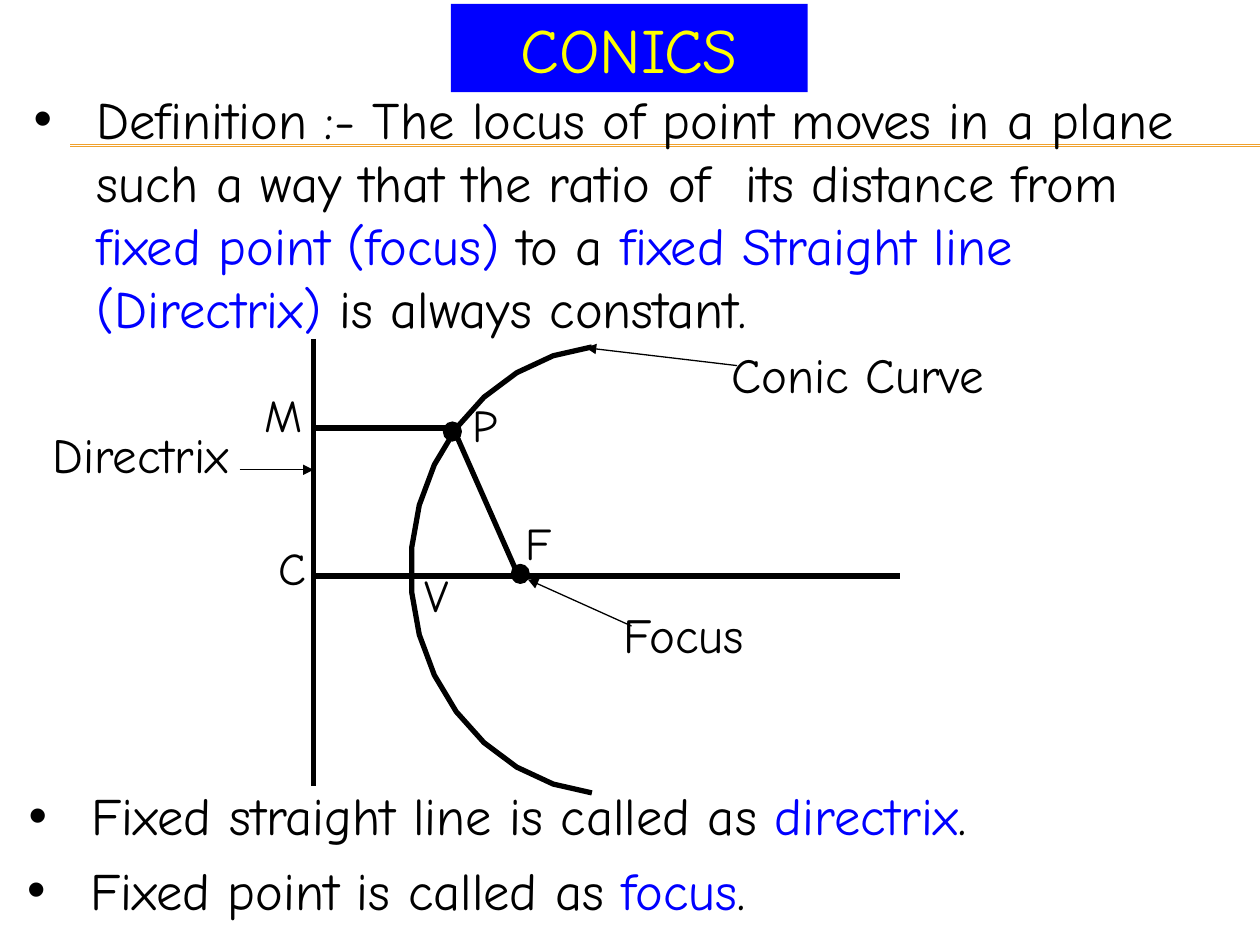
import math

from lxml import etree
from pptx import Presentation
from pptx import util as u
from pptx.dml.color import RGBColor
from pptx.enum import shapes, text
from pptx.oxml import ns

BLACK = RGBColor(0x00, 0x00, 0x00)
BLUE = RGBColor(0x00, 0x00, 0xFF)
YELLOW = RGBColor(0xFF, 0xFF, 0x00)
ORANGE = RGBColor(0xF0, 0xA2, 0x2E)
CENTER, RIGHT = text.PP_ALIGN.CENTER, text.PP_ALIGN.RIGHT


class Sketch:
    """Holds the style and the current slide; lengths are in centimetres."""

    font = "Comic Neue"
    thick, thin = 3, 0.75

    def __init__(self, slide):
        self.slide = slide

    def place(self, shape, left, top, width, height):
        frame = dict(left=left, top=top, width=width, height=height)
        for name, value in frame.items():
            setattr(shape, name, u.Cm(value))

    def span(self, para, wording, size, color):
        span = para.add_run()
        span.text = wording
        for name, value in dict(name=self.font, size=u.Pt(size)).items():
            setattr(span.font, name, value)
        span.font.color.rgb = color

    def frame(self, box):
        settings = dict(word_wrap=True, auto_size=text.MSO_AUTO_SIZE.NONE,
                        vertical_anchor=text.MSO_ANCHOR.TOP)
        for name, value in settings.items():
            setattr(box.text_frame, name, value)
        return box.text_frame.paragraphs[0]

    def title(self, wording, *at):
        title = self.slide.shapes.title
        self.place(title, *at)
        title.fill.solid()
        title.fill.fore_color.rgb = BLUE
        para = self.frame(title)
        para.alignment = CENTER
        self.span(para, wording, 36, YELLOW)

    def label(self, wording, *at, size=26, align=CENTER, parent=None):
        canvas = (parent or self.slide).shapes
        box = canvas.add_textbox(*map(u.Cm, at))
        para = self.frame(box)
        para.alignment = align
        self.span(para, wording, size, BLACK)

    def bullet(self, parts, *at):
        """Parts alternate between plain and highlighted wording."""
        box = self.slide.shapes.add_textbox(*map(u.Cm, at))
        para = self.frame(box)
        props = para._p.get_or_add_pPr()
        indent = u.Cm(1.27)
        props.set("marL", str(indent))
        props.set("indent", str(-indent))
        etree.SubElement(props, ns.qn("a:buFont"), typeface="Arial")
        etree.SubElement(props, ns.qn("a:buChar"), char="•")
        for index, wording in enumerate(parts):
            self.span(para, wording, 30, BLUE if index % 2 else BLACK)

    def line(self, *ends, width=thick, color=BLACK, arrow=False, parent=None):
        canvas = (parent or self.slide).shapes
        line = canvas.add_connector(shapes.MSO_CONNECTOR.STRAIGHT, *map(u.Cm, ends))
        line.line.width = u.Pt(width)
        line.line.color.rgb = color
        if arrow:
            etree.SubElement(line.line._get_or_add_ln(), ns.qn("a:tailEnd"), type="triangle")
        etree.SubElement(line._element.spPr, ns.qn("a:effectLst"))

    def callout(self, wording, at, ends):
        group = self.slide.shapes.add_group_shape()
        self.label(wording, *at, size=28, parent=group)
        self.line(*ends, width=self.thin, arrow=True, parent=group)

    def curve(self, points):
        start, *rest = [(u.Cm(x), u.Cm(y)) for x, y in points]
        builder = self.slide.shapes.build_freeform(*start)
        builder.add_line_segments(rest, close=False)
        curve = builder.convert_to_shape()
        curve.shadow.inherit = False
        curve.fill.background()
        curve.line.width = u.Pt(self.thick)
        curve.line.color.rgb = BLACK

    def dot(self, left, top):
        at = map(u.Cm, (left, top, 0.36, 0.38))
        dot = self.slide.shapes.add_shape(shapes.MSO_SHAPE.OVAL, *at)
        dot.shadow.inherit = False
        dot.fill.solid()
        dot.fill.fore_color.rgb = BLACK
        dot.line.color.rgb = BLACK
        dot.line.width = u.Pt(self.thin)


def main():
    deck = Presentation()
    deck.slide_width, deck.slide_height = u.Cm(25.4), u.Cm(19.05)
    sketch = Sketch(deck.slides.add_slide(deck.slide_layouts[5]))

    # Double rule and title
    for y in (2.92, 2.95):
        sketch.line(1.42, y, 25.4, y, width=sketch.thin, color=ORANGE)
    sketch.title("CONICS", 9.09, 0.08, 7.19, 1.78)

    # Definition and naming bullets
    sketch.bullet(
        ["Definition :- The locus of point moves in a plane such a way that "
         "the ratio of  its distance from ", "fixed point (focus)", " to a ",
         "fixed Straight line (Directrix)", " is always constant."],
        0.43, 1.63, 24.13, 5.33)
    sketch.bullet(["Fixed straight line is called as ", "directrix", "."],
                  0.33, 15.67, 22.94, 1.91)
    sketch.bullet(["Fixed point is called as ", "focus", "."],
                  0.3, 17.17, 18.21, 1.91)

    # Conic: 16 points at equal angles on the left side of an ellipse
    half_step = math.radians(5.6)
    angles = [n * half_step for n in range(-15, 16, 2)]
    sketch.curve([(12.36 - 4.08 * math.cos(a), 11.49 + 4.52 * math.sin(a)) for a in angles])

    # Directrix, focal radius PF, axis and distance PM
    for ends in [(6.32, 6.83, 6.32, 15.85), (9.14, 8.64, 10.46, 11.63),
                 (6.3, 11.61, 18.14, 11.61), (6.3, 8.63, 9.14, 8.63)]:
        sketch.line(*ends)

    # Point names
    for name, left, top, width, align in [
            ("M", 4.93, 7.67, 1.57, CENTER), ("C", 5.08, 10.77, 1.65, CENTER),
            ("F", 10.13, 10.26, 1.45, CENTER), ("V", 8.18, 11.3, 1.12, RIGHT),
            ("P", 9.22, 7.87, 1.12, CENTER)]:
        sketch.label(name, left, top, width, 1.68, align=align)

    # Names with arrows
    sketch.callout("Focus", (12.14, 12.07, 3.3, 1.8), (12.73, 12.62, 10.64, 11.68))
    sketch.callout("Conic Curve", (14.25, 6.83, 6.07, 1.8), (14.86, 7.37, 11.81, 7.01))
    sketch.callout("Directrix", (0.2, 8.43, 5.26, 1.8), (4.83, 9.47, 6.32, 9.47))

    # Points F and P
    sketch.dot(10.31, 11.38)
    sketch.dot(8.94, 8.51)

    deck.save("out.pptx")


if __name__ == "__main__":
    main()
